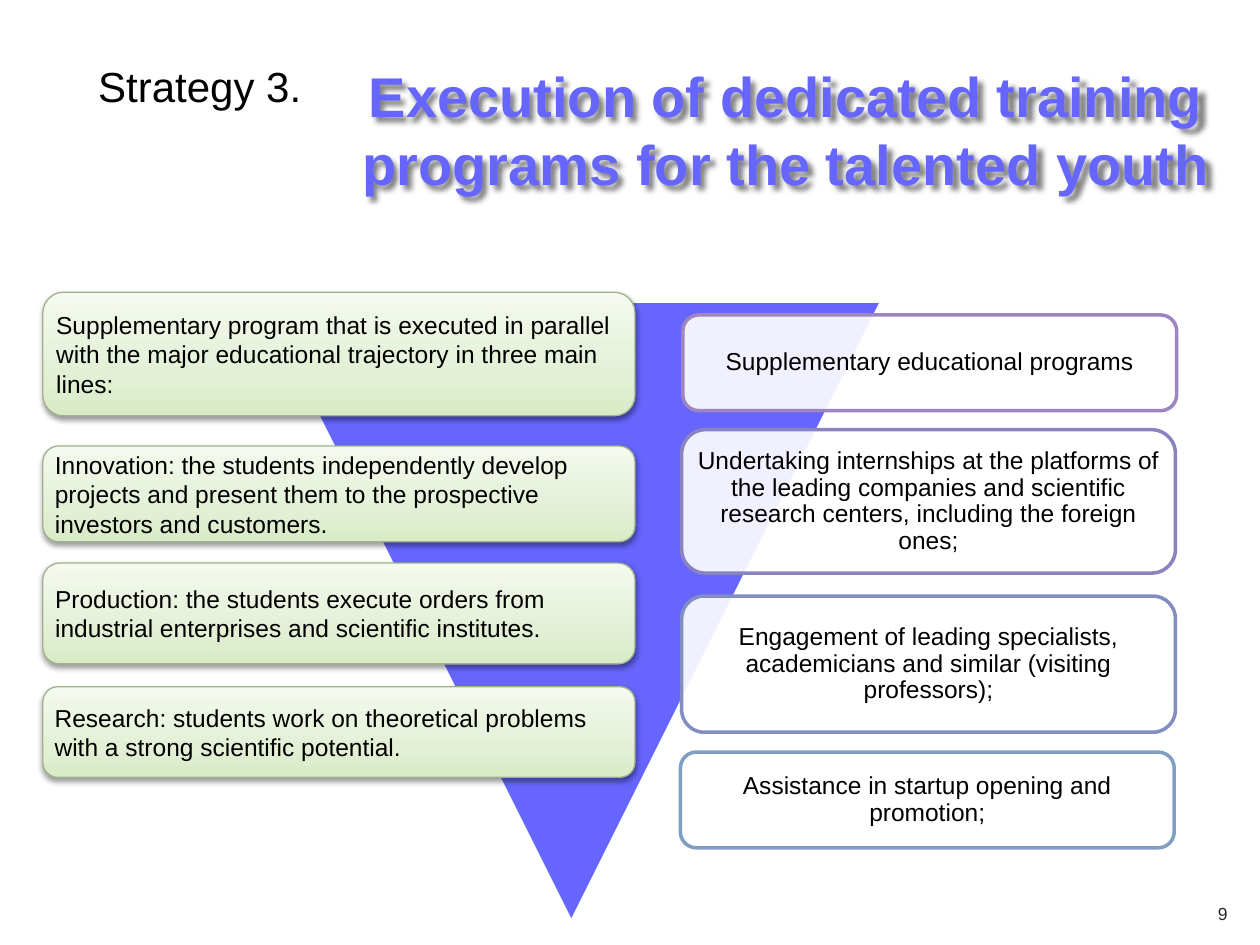
from lxml.etree import SubElement
from pptx import Presentation
from pptx.dml.color import RGBColor
from pptx.enum.shapes import MSO_SHAPE
from pptx.enum.text import MSO_ANCHOR, MSO_AUTO_SIZE, PP_ALIGN
from pptx.oxml.ns import qn
from pptx.util import Pt

COLORS = {"accent": "6666FF", "white": "FFFFFF", "black": "000000",
          "number": "262626", "green_line": "A1B28E"}
GREEN_STOPS = [(0, "D9EAC6"), (35, "E3F0D6"), (100, "F4FAEF")]
FONT = "Arial"
TITLE = "Execution of dedicated training programs for the talented youth"

LINES = [
    (167, 70.6, "Supplementary program that is executed in parallel with the "
                "major educational trajectory in three main lines:"),
    (254.9, 54.7, "Innovation: the students independently develop projects and "
                  "present them to the prospective investors and customers."),
    (321.8, 57.6, "Production: the students execute orders from industrial "
                  "enterprises and scientific institutes."),
    (392.4, 51.8, "Research: students work on theoretical problems with a "
                  "strong scientific potential."),
]
MEASURES = [
    (390.2, 180, 54.7, "9C85C0", "Supplementary educational programs"),
    (389.5, 245.5, 82, "8A83C1",
     "Undertaking internships at the platforms of the leading companies and "
     "scientific research centers, including the foreign ones;"),
    (389.5, 340.6, 77.8, "828DC1",
     "Engagement of leading specialists, academicians and similar "
     "(visiting professors);"),
    (388.8, 429.8, 54.7, "809EC2", "Assistance in startup opening and promotion;"),
]


def rgb(value):
    return RGBColor.from_string(value)


def write(shape, text, size, color, align, anchor=MSO_ANCHOR.MIDDLE,
          inset=None, bold=False, spacing=None):
    tf = shape.text_frame
    tf.word_wrap = True
    tf.auto_size = MSO_AUTO_SIZE.NONE
    tf.vertical_anchor = anchor
    if inset is not None:
        tf.margin_left = tf.margin_right = Pt(inset)
        tf.margin_top = tf.margin_bottom = Pt(inset)
    p = tf.paragraphs[0]
    p.text = text
    p.alignment = align
    if spacing:
        p.line_spacing = spacing
    p.font.name, p.font.size, p.font.bold = FONT, Pt(size), bold
    p.font.color.rgb = rgb(color)


def add_box(s, kind, box, line, width):
    sp = s.shapes.add_shape(kind, *map(Pt, box))
    sp.shadow.inherit = False
    sp.line.color.rgb = rgb(line)
    sp.line.width = Pt(width)
    return sp


def fill_solid(sp, color, alpha=None):
    sp.fill.solid()
    sp.fill.fore_color.rgb = rgb(color)
    if alpha:
        clr = sp.element.spPr.find(qn("a:solidFill"))[0]
        SubElement(clr, qn("a:alpha"), val=str(alpha * 1000))


def fill_green(sp):
    sp.fill.gradient()
    grad = sp.element.spPr.find(qn("a:gradFill"))
    stops = grad.find(qn("a:gsLst"))
    for stop in list(stops):
        stops.remove(stop)
    for pos, color in GREEN_STOPS:
        stop = SubElement(stops, qn("a:gs"), pos=str(pos * 1000))
        SubElement(stop, qn("a:srgbClr"), val=color)
    grad.find(qn("a:lin")).set("ang", str(270 * 60000))


def add_shadow(sp, alpha, blur, dist, angle):
    sp.shadow.inherit = False
    effects = sp.element.spPr.find(qn("a:effectLst"))
    shadow = SubElement(effects, qn("a:outerShdw"), blurRad=str(Pt(blur)),
                        dist=str(Pt(dist)), dir=str(angle * 60000),
                        rotWithShape="0")
    clr = SubElement(shadow, qn("a:srgbClr"), val=COLORS["black"])
    SubElement(clr, qn("a:alpha"), val=str(alpha * 1000))


def add_label(s, box, *args, **kwargs):
    write(s.shapes.add_textbox(*map(Pt, box)), *args, **kwargs)


def main():
    prs = Presentation()
    prs.slide_width, prs.slide_height = Pt(720), Pt(540)
    s = prs.slides.add_slide(prs.slide_layouts[5])

    title = s.shapes.title
    title.left, title.top, title.width, title.height = map(Pt, (178.6, 38.9, 541.4, 69.8))
    write(title, TITLE, 32, COLORS["accent"], PP_ALIGN.CENTER, bold=True)
    add_shadow(title, 50, 3, 3, 45)

    triangle = add_box(s, MSO_SHAPE.ISOSCELES_TRIANGLE, (149, 172.1, 355, 355),
                       COLORS["white"], 2)
    triangle.rotation = 180
    fill_solid(triangle, COLORS["accent"])

    for left, top, height, line, text in MEASURES:
        sp = add_box(s, MSO_SHAPE.ROUNDED_RECTANGLE, (left, top, 282.2, height), line, 2)
        fill_solid(sp, COLORS["white"], 90)
        write(sp, text, 14, COLORS["black"], PP_ALIGN.CENTER, inset=4.2, spacing=0.9)

    for top, height, text in LINES:
        sp = add_box(s, MSO_SHAPE.ROUNDED_RECTANGLE, (24.5, top, 338.4, height),
                     COLORS["green_line"], 0.75)
        fill_green(sp)
        add_shadow(sp, 38, 3.1, 1.6, 90)
        write(sp, text, 14, COLORS["black"], PP_ALIGN.LEFT, inset=4.2)

    add_label(s, (31.7, 31, 164.9, 36), "Strategy 3.", 24, COLORS["black"],
              PP_ALIGN.CENTER, MSO_ANCHOR.TOP)
    add_label(s, (680.4, 507.6, 36.7, 28.8), "9", 10, COLORS["number"], PP_ALIGN.CENTER)

    prs.save("out.pptx")


if __name__ == "__main__":
    main()
